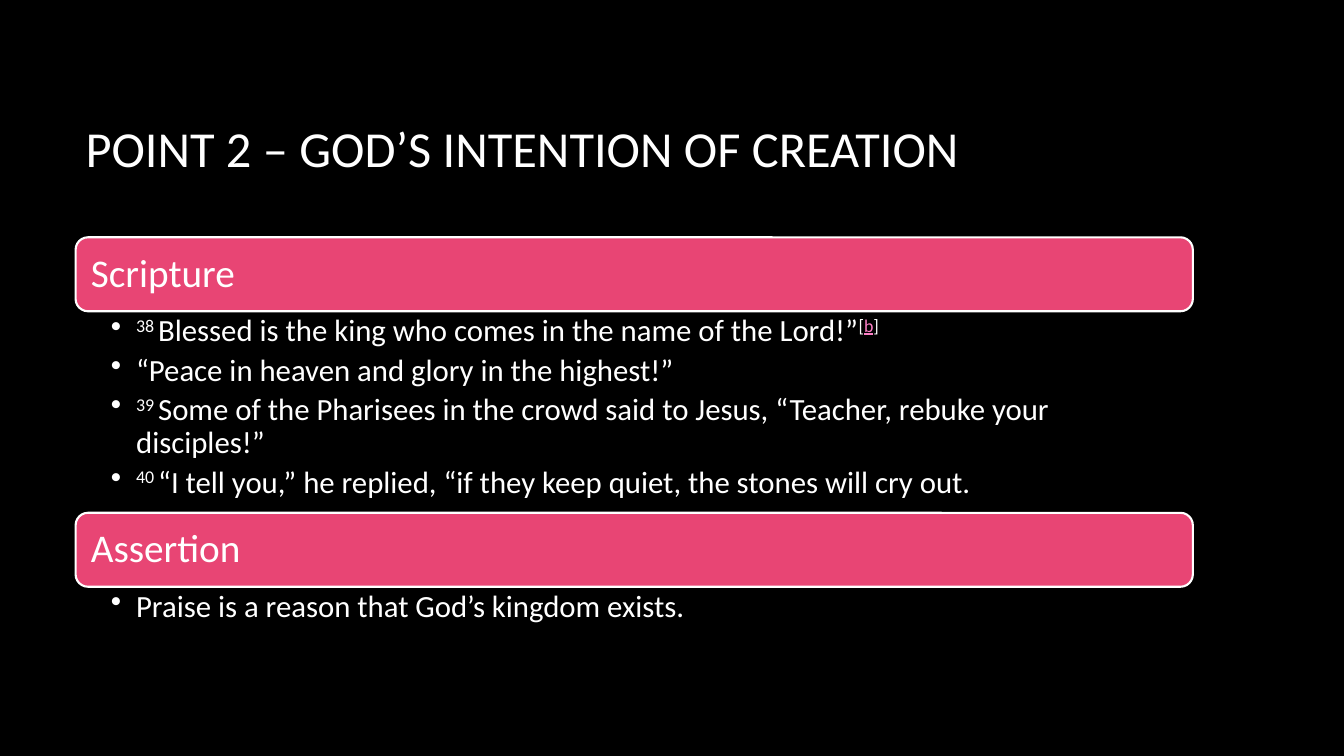
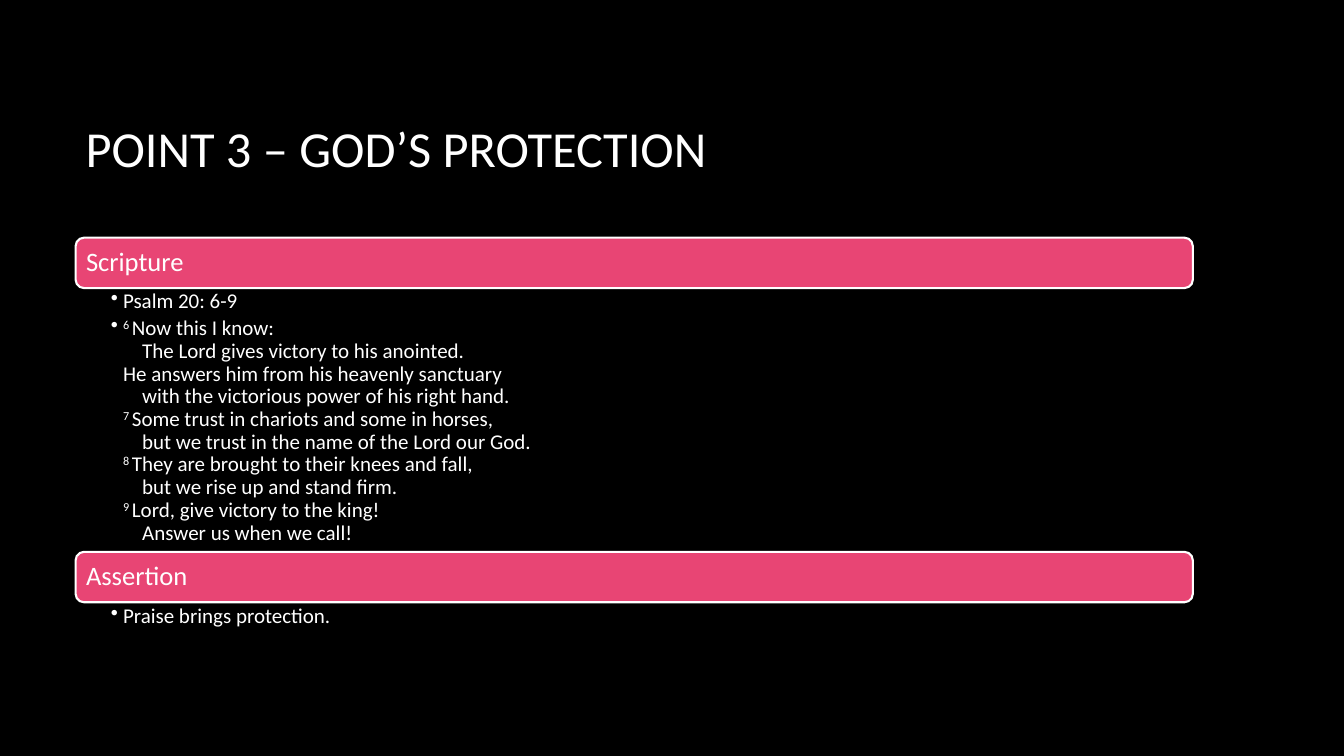
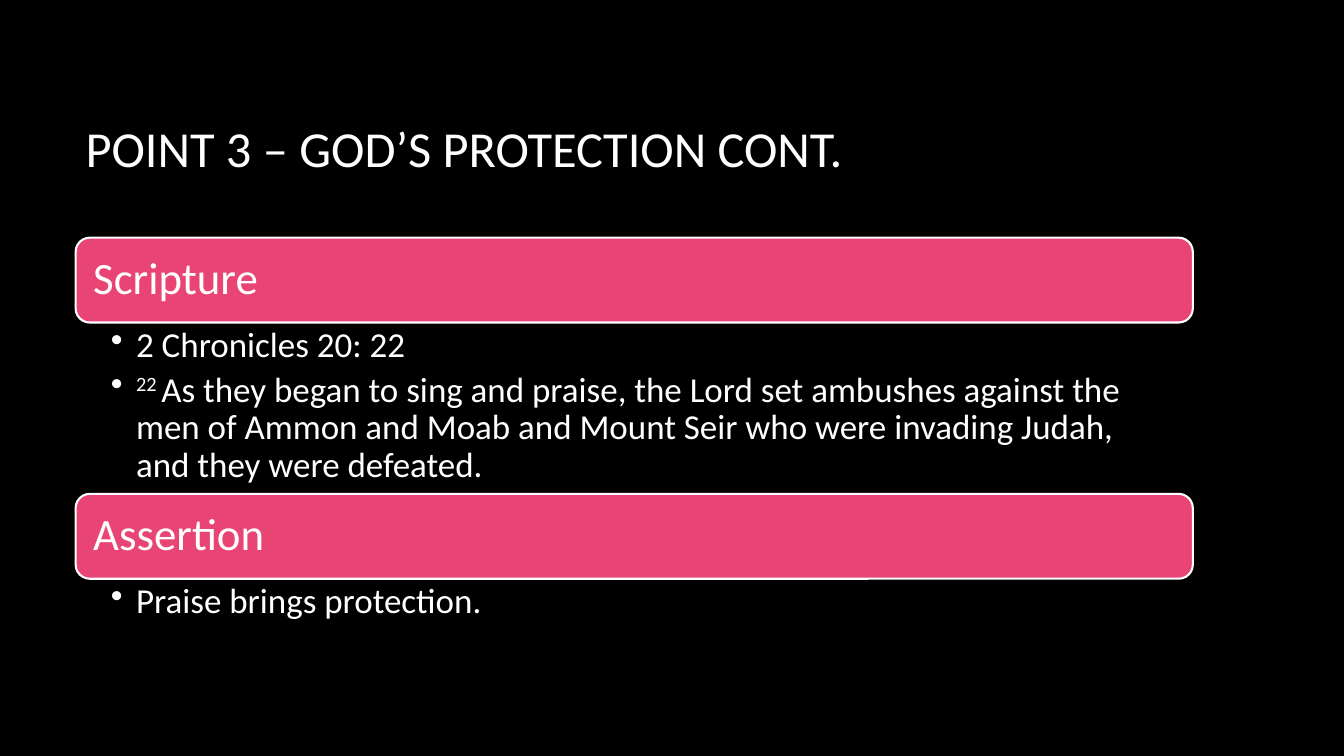
"""Build three sermon slides with scripture and assertion bands."""
from pptx import Presentation
from pptx.dml.color import RGBColor
from pptx.enum.shapes import MSO_SHAPE
from pptx.enum.text import MSO_ANCHOR, PP_ALIGN
from pptx.oxml.ns import qn
from pptx.util import Inches, Pt
from lxml.etree import SubElement

BLACK = RGBColor(0x00, 0x00, 0x00)
WHITE = RGBColor(0xFF, 0xFF, 0xFF)
PINK = RGBColor(0xE8, 0x45, 0x74)
LINK = RGBColor(0xFE, 0x80, 0xC7)
FONT = "Calibri"
COLS, ROWS = 160, 90
LEFT, WIDTH = 9, 133
VERSE_INDENT = 0.19


class Deck:
    """Hold the shared style and the current slide."""

    def __init__(self):
        """Start a wide presentation."""
        self.prs = Presentation()
        self.prs.slide_width = Inches(13.33)
        self.prs.slide_height = Inches(7.5)

    def box(self, row, rows):
        """Return the content-wide area that starts at a grid row."""
        col_w = self.prs.slide_width / COLS
        row_h = self.prs.slide_height / ROWS
        return [int(v) for v in (LEFT * col_w, row * row_h, WIDTH * col_w, rows * row_h)]

    def style(self, r, size, color=WHITE):
        """Apply the shared font to a run."""
        r.font.name = FONT
        r.font.size = Pt(size)
        r.font.color.rgb = color

    def slide(self, title):
        """Add a black slide with its title."""
        self.s = self.prs.slides.add_slide(self.prs.slide_layouts[6])
        self.s.background.fill.solid()
        self.s.background.fill.fore_color.rgb = BLACK
        tf = self.s.shapes.add_textbox(*self.box(8, 19)).text_frame
        tf.word_wrap = True
        tf.vertical_anchor = MSO_ANCHOR.MIDDLE
        tf.text = title
        self.style(tf.paragraphs[0].runs[0], 36)

    def band(self, row, rows, text, size):
        """Add a rounded pink heading band."""
        sp = self.s.shapes.add_shape(MSO_SHAPE.ROUNDED_RECTANGLE, *self.box(row, rows))
        sp.shadow.inherit = False
        sp.fill.solid()
        sp.fill.fore_color.rgb = PINK
        sp.line.color.rgb = WHITE
        sp.line.width = Pt(1.5)
        tf = sp.text_frame
        tf.margin_left = tf.margin_right = tf.margin_top = tf.margin_bottom = Pt(0.3 * size)
        tf.vertical_anchor = MSO_ANCHOR.MIDDLE
        tf.text = text
        p = tf.paragraphs[0]
        p.alignment = PP_ALIGN.LEFT
        p.line_spacing = 0.9
        self.style(p.runs[0], size)

    def runs(self, p, line, size):
        """Write a line: ^...^ is superscript, _..._ inside it a reference."""
        for i, part in enumerate(line.split("^")):
            for j, text in enumerate(part.split("_")):
                if not text:
                    continue
                r = p.add_run()
                r.text = text
                self.style(r, size, LINK if j % 2 else WHITE)
                if j % 2:
                    r.font.underline = True
                if i % 2:
                    r.font._element.set("baseline", "30000")

    def bullets(self, row, rows, items, size, head_size, indent):
        """Add bulleted text; a tab opens an indented verse line."""
        tf = self.s.shapes.add_textbox(*self.box(row, rows)).text_frame
        tf.word_wrap = True
        tf.margin_left = Inches(0.35)
        tf.margin_right = Pt(0.56 * head_size)
        tf.margin_top = tf.margin_bottom = Pt(0.1 * head_size)
        p = tf.paragraphs[0]
        for n, item in enumerate(items):
            lines = item.split("\n")
            for k, line in enumerate(lines):
                if n or k:
                    p = tf.add_paragraph()
                margin = indent + (VERSE_INDENT if line.startswith("\t") else 0)
                p.line_spacing = 0.9
                p.space_after = Pt(0.2 * size if k == len(lines) - 1 else 0)
                pPr = p._p.get_or_add_pPr()
                pPr.set("marL", str(Inches(margin)))
                pPr.set("indent", str(0 if k else -Inches(indent)))
                if k == 0:
                    SubElement(pPr, qn("a:buChar"), char="•")
                self.runs(p, line.strip("\t"), size)

    def point(self, title, scripture, assertion, top, band, body, head_size, size, indent):
        """Add a slide that stacks a scripture and an assertion section."""
        self.slide(title)
        sections = (("Scripture", scripture, body), ("Assertion", [assertion], band * 0.69))
        row = top
        for heading, items, rows in sections:
            self.band(row, band, heading, head_size)
            self.bullets(row + band, rows, items, size, head_size, indent)
            row += band + rows


def main():
    """Build and save the deck."""
    deck = Deck()
    deck.point(
        "POINT 2 – GOD’S INTENTION OF CREATION",
        ["^38 ^Blessed is the king who comes in the name of the Lord!”^[_b_]^",
         "“Peace in heaven and glory in the highest!”",
         "^39 ^Some of the Pharisees in the crowd said to Jesus, “Teacher, rebuke your disciples!”",
         "^40 ^“I tell you,” he replied, “if they keep quiet, the stones will cry out."],
        "Praise is a reason that God’s kingdom exists.",
        top=28.25, band=8.8, body=24, head_size=28, size=22, indent=0.25)
    deck.point(
        "POINT 3 – GOD’S PROTECTION",
        ["Psalm 20: 6-9",
         "^6 ^Now this I know:\n"
         "\tThe Lord gives victory to his anointed.\n"
         "He answers him from his heavenly sanctuary\n"
         "\twith the victorious power of his right hand.\n"
         "^7 ^Some trust in chariots and some in horses,\n"
         "\tbut we trust in the name of the Lord our God.\n"
         "^8 ^They are brought to their knees and fall,\n"
         "\tbut we rise up and stand firm.\n"
         "^9 ^Lord, give victory to the king!\n"
         "\tAnswer us when we call!"],
        "Praise brings protection.",
        top=28.3, band=6, body=31.4, head_size=19, size=15, indent=0.12)
    deck.point(
        "POINT 3 – GOD’S PROTECTION CONT.",
        ["2 Chronicles 20: 22",
         "^22 ^As they began to sing and praise, the Lord set ambushes against the men of "
         "Ammon and Moab and Mount Seir who were invading Judah, and they were defeated."],
        "Praise brings protection.",
        top=28.3, band=10.1, body=20.4, head_size=32, size=25, indent=0.25)
    deck.prs.save("out.pptx")


if __name__ == "__main__":
    main()
